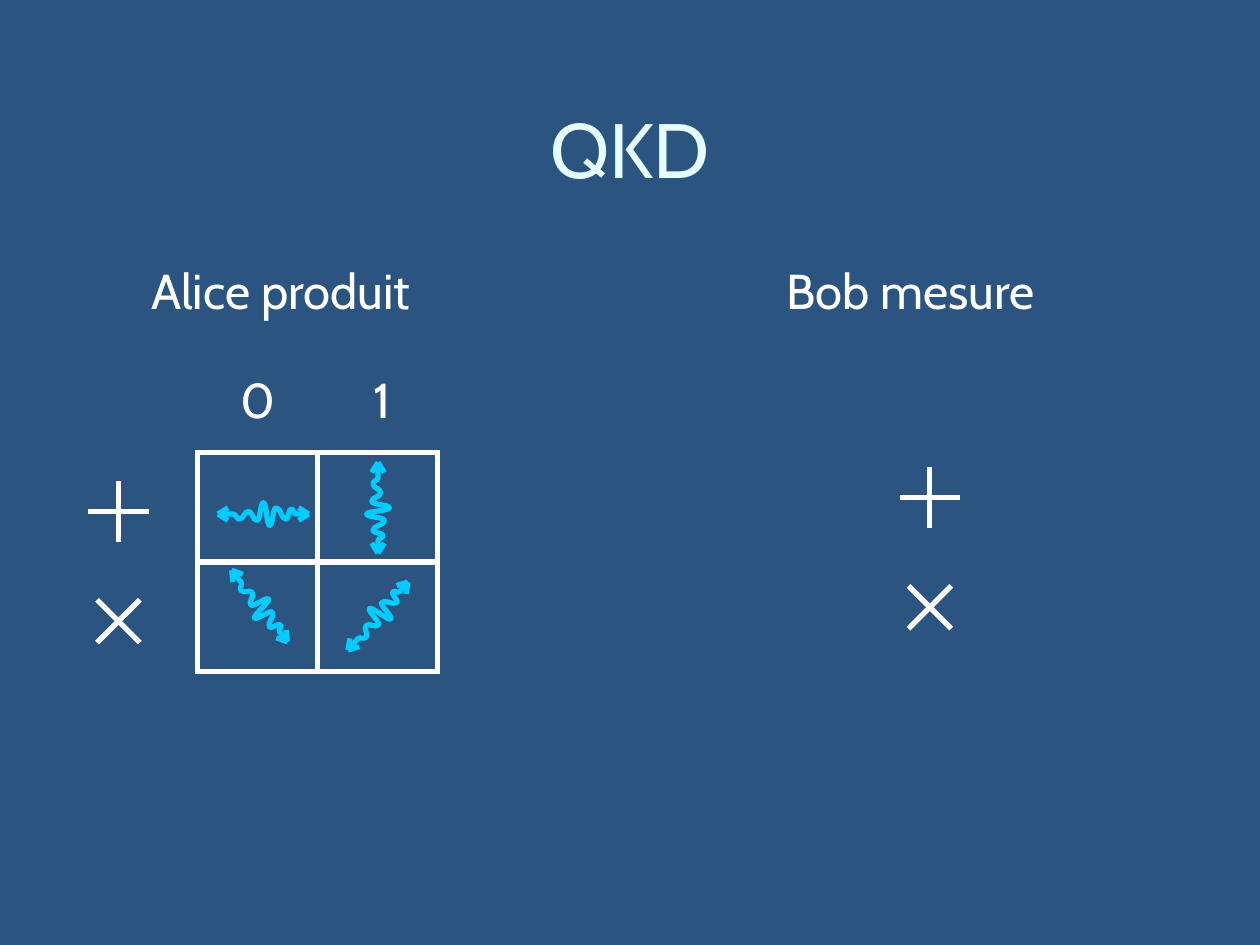
"""Build the QKD slide: states sent by Alice and bases measured by Bob."""
from math import cos, sin, radians
from lxml.etree import SubElement
from pptx import Presentation
from pptx.dml.color import RGBColor
from pptx.enum.shapes import MSO_CONNECTOR as LINK, MSO_SHAPE as SHAPE
from pptx.enum.text import MSO_ANCHOR as ANCHOR, MSO_AUTO_SIZE as AUTO, PP_ALIGN as ALIGN
from pptx.oxml.ns import qn
from pptx.util import Inches, Pt

FONT, WHITE, CYAN, NAVY = "Cabin", "FFFFFF", "00CCFF", "003366"
TITLE = "QKD"
LABELS = [
    ("0", 1.81, 2.88, 0.41),
    ("1", 2.83, 2.88, 0.41),
    ("Alice produit", 1.06, 2.02, 2.34),
    ("Bob mesure", 6.1, 2.02, 2.25),
]
GRID = (1.57, 3.59, 0.95, 0.87)
WAVES = [(2.09, 4.08, 0), (3, 4.03, 90), (2.06, 4.81, 52.1), (3, 4.89, -48.5)]
CURVE = [
    (0.33, 0), (0.32, 0), (0.26, 0), (0.22, -0.04), (0.18, 0.04), (0.1, -0.05),
    (0.05, 0.09), (0, -0.09), (-0.05, 0.05), (-0.12, -0.02), (-0.19, 0.04),
    (-0.24, 0), (-0.3, 0), (-0.33, 0),
]
TIP, BARB, SPREAD = 0.36, 0.28, 0.05
BASES = [(0.94, 4.06), (7.38, 3.95)]
ARM, DROP = 0.24, 0.87


def color(code):
    return RGBColor.from_string(code)


def stroke(item, code):
    item.line.color.rgb = color(code)
    item.line.width = Pt(3)


def turn(spot, point):
    x, y, angle = spot
    u, v = point
    c, s = cos(radians(angle)), sin(radians(angle))
    return Inches(x + u * c - v * s), Inches(y + u * s + v * c)


def segment(shapes, spot, start, end, code):
    line = shapes.add_connector(LINK.STRAIGHT, *turn(spot, start), *turn(spot, end))
    stroke(line, code)
    SubElement(line._element.spPr, qn("a:effectLst"))


def bend(shape):
    track = shape._element.find(".//" + qn("a:path"))
    last = None
    for node in list(track):
        x, y = (int(node[0].get(key)) for key in "xy")
        if last:
            mid = (last[1] + y) // 2
            arc = track.makeelement(qn("a:cubicBezTo"), {})
            for px, py in ((last[0], mid), (x, mid), (x, y)):
                SubElement(arc, qn("a:pt"), x=str(px), y=str(py))
            track.replace(node, arc)
        last = x, y


def photon(shapes, spot):
    x, y, angle = spot
    group = shapes.add_group_shape().shapes
    first, *rest = [turn((x, y, -90), point) for point in CURVE]
    outline = group.build_freeform(*first)
    outline.add_line_segments(rest, close=False)
    wave = outline.convert_to_shape()
    bend(wave)
    wave.rotation = angle + 90
    wave.shadow.inherit = False
    wave.fill.solid()
    wave.fill.fore_color.rgb = color(NAVY)
    stroke(wave, CYAN)
    for way in (1, -1):
        for side in (-SPREAD, SPREAD):
            segment(group, spot, (way * BARB, side), (way * TIP, 0), CYAN)


def cross(shapes, x, y, angle):
    group = shapes.add_group_shape().shapes
    for tilt in (angle, angle + 90):
        segment(group, (x, y, tilt), (-ARM, 0), (ARM, 0), WHITE)


def write(frame, text, size, code):
    para = frame.paragraphs[0]
    para.alignment = ALIGN.CENTER
    run = para.add_run()
    run.text = text
    run.font.name, run.font.size = FONT, Pt(size)
    run.font.color.rgb = color(code)


def main():
    deck = Presentation()
    deck.slide_width, deck.slide_height = Inches(10), Inches(7.5)
    slide = deck.slides.add_slide(deck.slide_layouts[5])
    slide.background.fill.solid()
    slide.background.fill.fore_color.rgb = color("2B5481")
    shapes = slide.shapes

    title = shapes.title
    title.left, title.top = Inches(0.5), Inches(0.42)
    title.width, title.height = Inches(9), Inches(1.5)
    title.text_frame.vertical_anchor = ANCHOR.MIDDLE
    write(title.text_frame, TITLE, 44, "E5FFFF")

    for spot in WAVES:
        photon(shapes, spot)

    left, top, width, height = GRID
    for row in range(2):
        for col in range(2):
            cell = shapes.add_shape(
                SHAPE.RECTANGLE, Inches(left + col * width), Inches(top + row * height),
                Inches(width), Inches(height))
            cell.shadow.inherit = False
            cell.fill.background()
            stroke(cell, WHITE)
            SubElement(cell.line._get_or_add_ln(), qn("a:miter"), lim="800000")

    for text, x, y, wide in LABELS:
        box = shapes.add_textbox(Inches(x), Inches(y), Inches(wide), Inches(0.57))
        box.text_frame.word_wrap = False
        box.text_frame.auto_size = AUTO.SHAPE_TO_FIT_TEXT
        write(box.text_frame, text, 28, WHITE)

    for x, y in BASES:
        cross(shapes, x, y, 0)
        cross(shapes, x, y + DROP, 45)

    deck.save("out.pptx")


if __name__ == "__main__":
    main()
